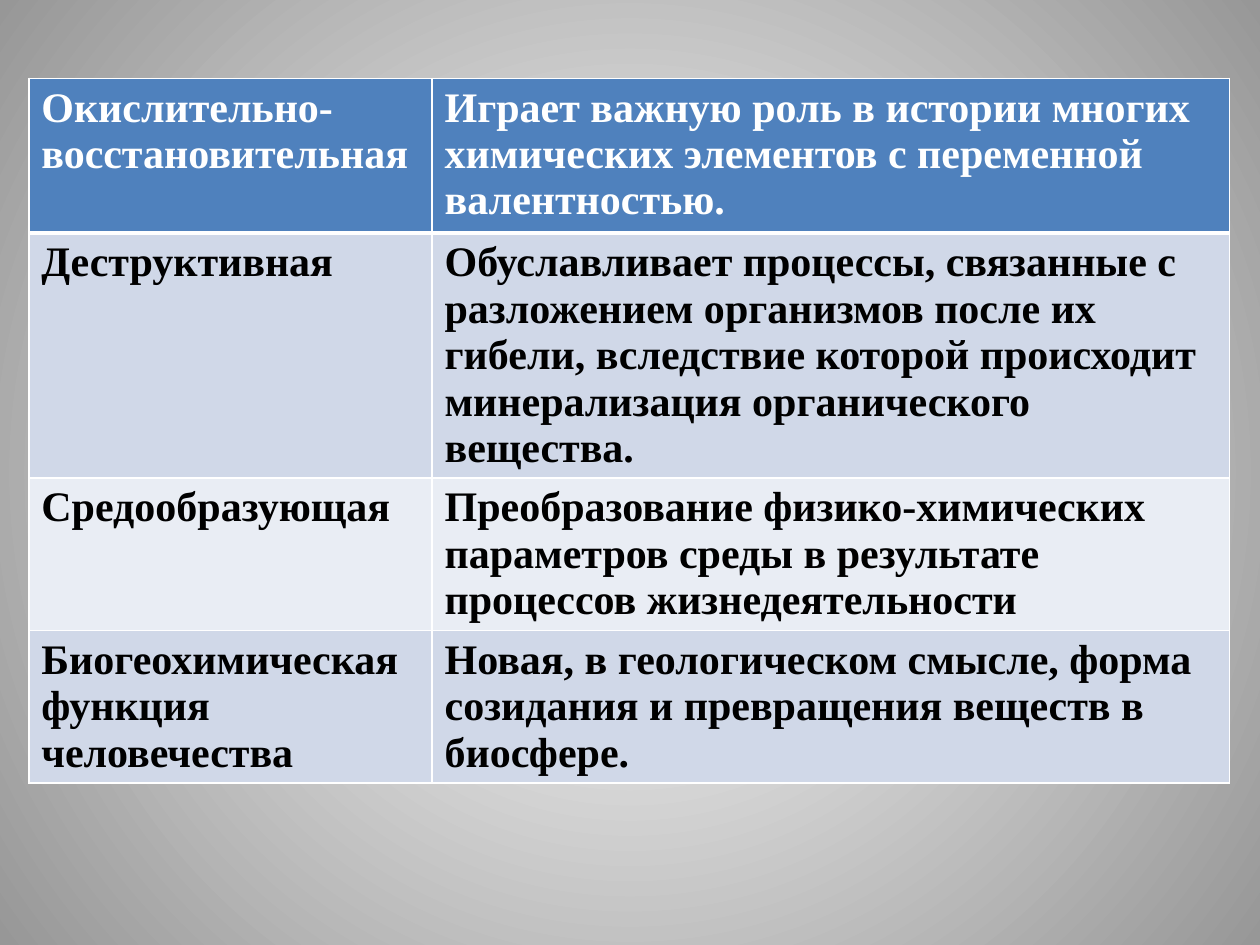
from typing import NamedTuple

from pptx import Presentation
from pptx.dml.color import RGBColor
from pptx.oxml import parse_xml
from pptx.oxml.ns import nsdecls, qn
from pptx.util import Cm, Pt

FONT = "Times New Roman"
WHITE, BLACK, GREY = "FFFFFF", "000000", "979797"
BLUE, BAND, PALE = "4F81BD", "D0D8E8", "E9EDF4"
COLS = (8.13, 16.08)
THIN, THICK = 1, 3


class Row(NamedTuple):
    name: str
    role: str
    high: float
    fill: str
    ink: str = BLACK


ROWS = (
    Row("Окислительно-восстановительная",
        "Играет важную роль в истории многих химических элементов "
        "с переменной валентностью.", 3.12, BLUE, WHITE),
    Row("Деструктивная",
        "Обуславливает процессы, связанные с разложением организмов после их "
        "гибели, вследствие которой происходит минерализация органического "
        "вещества.", 4.94, BAND),
    Row("Средообразующая",
        "Преобразование физико-химических параметров среды в результате "
        "процессов жизнедеятельности", 3.07, PALE),
    Row("Биогеохимическая функция человечества",
        "Новая, в геологическом смысле, форма созидания и превращения "
        "веществ в биосфере.", 3.07, BAND),
)


def color(code: str) -> RGBColor:
    return RGBColor.from_string(code)


def paint_back(slide) -> None:
    """Fill the background with a round gradient, light at the centre."""
    fill = slide.background.fill
    fill.gradient()
    for stop, code in zip(fill.gradient_stops, (WHITE, GREY)):
        stop.color.rgb = color(code)
    line = slide.element.find(".//" + qn("a:lin"))
    line.getparent().replace(line, parse_xml(
        f'<a:path {nsdecls("a")} path="circle">'
        '<a:fillToRect l="50000" t="50000" r="50000" b="50000"/></a:path>'))


def add_edges(cell, top: float, base: float) -> None:
    """Draw the white borders of a cell, widths in points."""
    props = cell._tc.get_or_add_tcPr()
    for side, width in (("L", THIN), ("R", THIN), ("T", top), ("B", base)):
        props.append(parse_xml(
            f'<a:ln{side} {nsdecls("a")} w="{Pt(width)}"><a:solidFill>'
            f'<a:srgbClr val="{WHITE}"/></a:solidFill></a:ln{side}>'))


def fill_cell(cell, text: str, row: Row) -> None:
    cell.fill.solid()
    cell.fill.fore_color.rgb = color(row.fill)
    cell.text = text
    font = cell.text_frame.paragraphs[0].font
    font.name, font.size, font.bold = FONT, Pt(24), True
    font.color.rgb = color(row.ink)


def add_grid(slide) -> None:
    high = sum(row.high for row in ROWS)
    table = slide.shapes.add_table(
        len(ROWS), len(COLS), Cm(0.58), Cm(1.58),
        Cm(sum(COLS)), Cm(high)).table
    for col, width in zip(table.columns, COLS):
        col.width = Cm(width)
    for i, row in enumerate(ROWS):
        table.rows[i].height = Cm(row.high)
        # A thick rule parts the head from the body
        top = THICK if i == 1 else THIN
        base = THICK if i == 0 else THIN
        for j, text in enumerate((row.name, row.role)):
            cell = table.cell(i, j)
            add_edges(cell, top, base)
            fill_cell(cell, text, row)


def main() -> None:
    deck = Presentation()
    deck.slide_width, deck.slide_height = Cm(25.4), Cm(19.05)
    slide = deck.slides.add_slide(deck.slide_layouts[6])
    paint_back(slide)
    add_grid(slide)
    deck.save("out.pptx")


if __name__ == "__main__":
    main()
